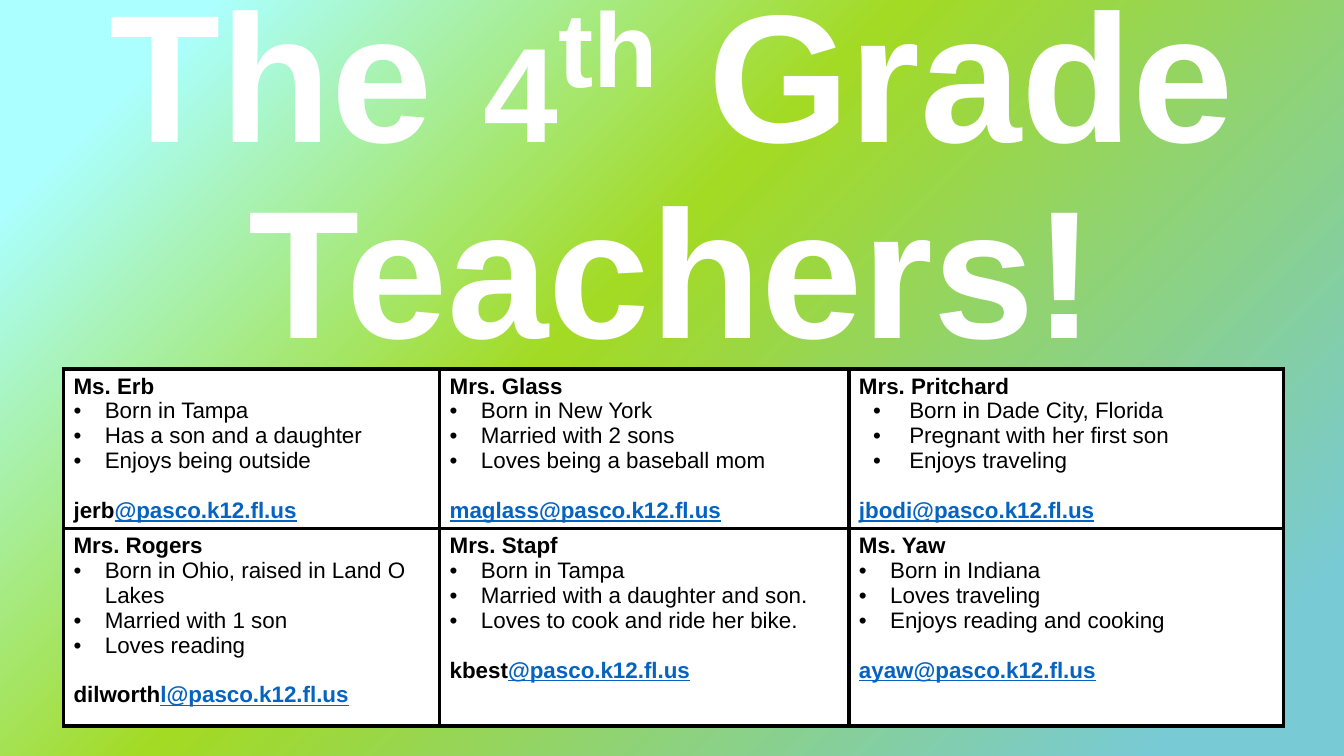
from dataclasses import dataclass

from lxml import etree
from pptx import Presentation, util as u
from pptx.dml.color import RGBColor
from pptx.enum import text
from pptx.oxml.ns import qn


@dataclass(frozen=True)
class Theme:
    font: str = "Arial"
    ink: str = "000000"
    paper: str = "FFFFFF"
    link: str = "0563C1"
    title: float = 130
    numeral: float = 96
    body: float = 16
    email_gap: float = 17.8
    border: float = 3
    gradient: tuple[tuple[int, str], ...] = (
        (0, "78CAD5"), (9, "78CAD5"), (57, "A3DA23"),
        (90, "ABFFFF"), (100, "ABFFFF"))


@dataclass(frozen=True)
class Teacher:
    name: str
    facts: tuple[str, ...]
    email: str
    plain: str = ""
    indent: float = 0.31
    hang: float = 0.31


THEME = Theme()
COLUMNS = (3.73, 2.32, 1.74, 4.31)
TEACHER_COLUMNS = (0, 1, 3)
ROWS = (1.58, 1.96)
TEACHERS = (
    (Teacher("Ms. Erb", ("Born in Tampa", "Has a son and a daughter", "Enjoys being outside"),
             "@pasco.k12.fl.us", "jerb"),
     Teacher("Mrs. Glass", ("Born in New York", "Married with 2 sons", "Loves being a baseball mom"),
             "maglass@pasco.k12.fl.us"),
     Teacher("Mrs. Pritchard",
             ("Born in Dade City, Florida", "Pregnant with her first son", "Enjoys traveling"),
             "jbodi@pasco.k12.fl.us", indent=0.5, hang=0.36)),
    (Teacher("Mrs. Rogers",
             ("Born in Ohio, raised in Land O Lakes", "Married with 1 son", "Loves reading"),
             "l@pasco.k12.fl.us", "dilworth"),
     Teacher("Mrs. Stapf",
             ("Born in Tampa", "Married with a daughter and son.", "Loves to cook and ride her bike."),
             "@pasco.k12.fl.us", "kbest"),
     Teacher("Ms. Yaw", ("Born in Indiana", "Loves traveling", "Enjoys reading and cooking"),
             "ayaw@pasco.k12.fl.us")),
)


def add_run(p, words: str, size: float, color: str, bold: bool = True, underline: bool = False):
    r = p.add_run()
    r.text = words
    f = r.font
    f.name, f.size, f.bold, f.underline = THEME.font, u.Pt(size), bold, underline
    f.color.rgb = RGBColor.from_string(color)
    return r


def paint_background(s) -> None:
    fill = s.background.fill
    fill.gradient()
    fill.gradient_angle = 135
    stops = next(s.element.iter(qn("a:gsLst")))
    for stop in list(stops):
        stops.remove(stop)
    for position, color in THEME.gradient:
        stop = etree.SubElement(stops, qn("a:gs"), pos=str(position * 1000))
        etree.SubElement(stop, qn("a:srgbClr"), val=color)


def add_title(s) -> None:
    sp = s.shapes.title
    sp.left, sp.top = u.Inches(0), u.Inches(-0.2)
    sp.width, sp.height = u.Inches(13.33), u.Inches(1.45)
    tf = sp.text_frame
    tf.word_wrap = True
    tf.auto_size = text.MSO_AUTO_SIZE.NONE
    tf.vertical_anchor = text.MSO_ANCHOR.TOP
    p = tf.paragraphs[0]
    p.alignment, p.line_spacing = text.PP_ALIGN.CENTER, 0.9
    add_run(p, "The ", THEME.title, THEME.paper)
    add_run(p, "4", THEME.numeral, THEME.paper)
    r = add_run(p, "th", THEME.title, THEME.paper)
    r.font._element.set("baseline", "30000")
    add_run(p, " Grade Teachers!", THEME.title, THEME.paper)


def add_bullet(p, teacher: Teacher) -> None:
    pPr = p._p.get_or_add_pPr()
    pPr.set("marL", str(u.Inches(teacher.indent)))
    pPr.set("indent", str(-u.Inches(teacher.hang)))
    color = etree.SubElement(pPr, qn("a:buClr"))
    etree.SubElement(color, qn("a:srgbClr"), val=THEME.ink)
    etree.SubElement(pPr, qn("a:buFont"), typeface=THEME.font)
    etree.SubElement(pPr, qn("a:buChar"), char="•")


def style_cell(cell) -> None:
    tcPr = cell._tc.get_or_add_tcPr()
    for side in ("lnL", "lnR", "lnT", "lnB"):
        ln = etree.SubElement(tcPr, qn(f"a:{side}"), w=str(u.Pt(THEME.border)))
        fill = etree.SubElement(ln, qn("a:solidFill"))
        etree.SubElement(fill, qn("a:srgbClr"), val=THEME.ink)
    cell.fill.solid()
    cell.fill.fore_color.rgb = RGBColor.from_string(THEME.paper)


def fill_cell(cell, teacher: Teacher) -> None:
    tf = cell.text_frame
    add_run(tf.paragraphs[0], teacher.name, THEME.body, THEME.ink)
    for fact in teacher.facts:
        p = tf.add_paragraph()
        add_bullet(p, teacher)
        add_run(p, fact, THEME.body, THEME.ink, bold=False)
    p = tf.add_paragraph()
    p.space_before = u.Pt(THEME.email_gap)
    if teacher.plain:
        add_run(p, teacher.plain, THEME.body, THEME.ink)
    add_run(p, teacher.email, THEME.body, THEME.link, underline=True)


def add_teachers(s) -> None:
    table = s.shapes.add_table(
        len(ROWS), len(COLUMNS), u.Inches(0.63), u.Inches(3.66),
        u.Inches(sum(COLUMNS)), u.Inches(sum(ROWS))).table
    table.first_row = table.horz_banding = False
    for column, width in zip(table.columns, COLUMNS):
        column.width = u.Inches(width)
    for i, (height, teachers) in enumerate(zip(ROWS, TEACHERS)):
        table.rows[i].height = u.Inches(height)
        for cell in table.rows[i].cells:
            style_cell(cell)
        table.cell(i, 1).merge(table.cell(i, 2))
        for j, teacher in zip(TEACHER_COLUMNS, teachers):
            fill_cell(table.cell(i, j), teacher)


def main() -> None:
    """Build the slide introducing the fourth grade teachers."""
    prs = Presentation()
    prs.slide_width, prs.slide_height = u.Inches(13.33), u.Inches(7.5)
    s = prs.slides.add_slide(prs.slide_layouts[5])
    paint_background(s)
    add_title(s)
    add_teachers(s)
    prs.save("out.pptx")


if __name__ == "__main__":
    main()
